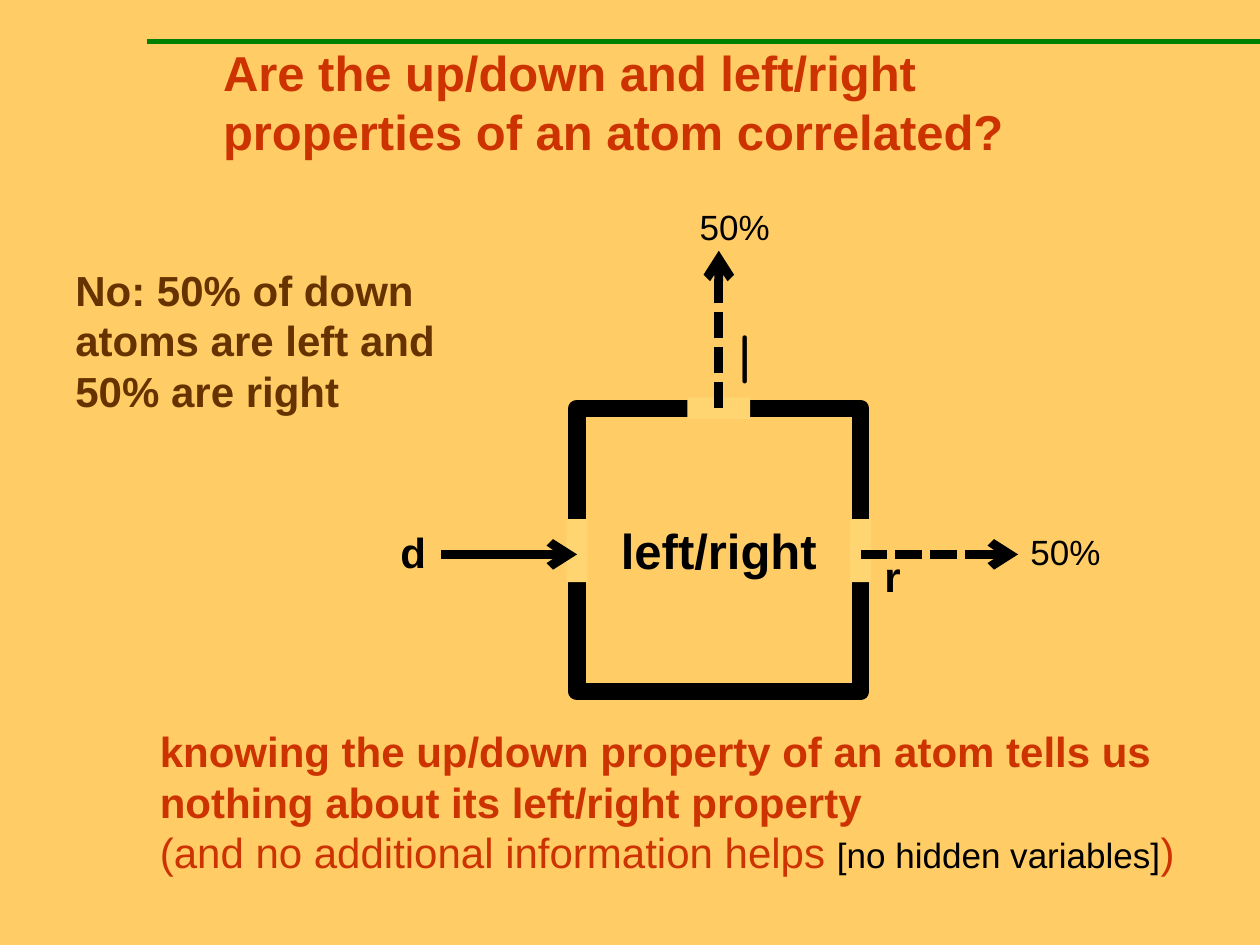
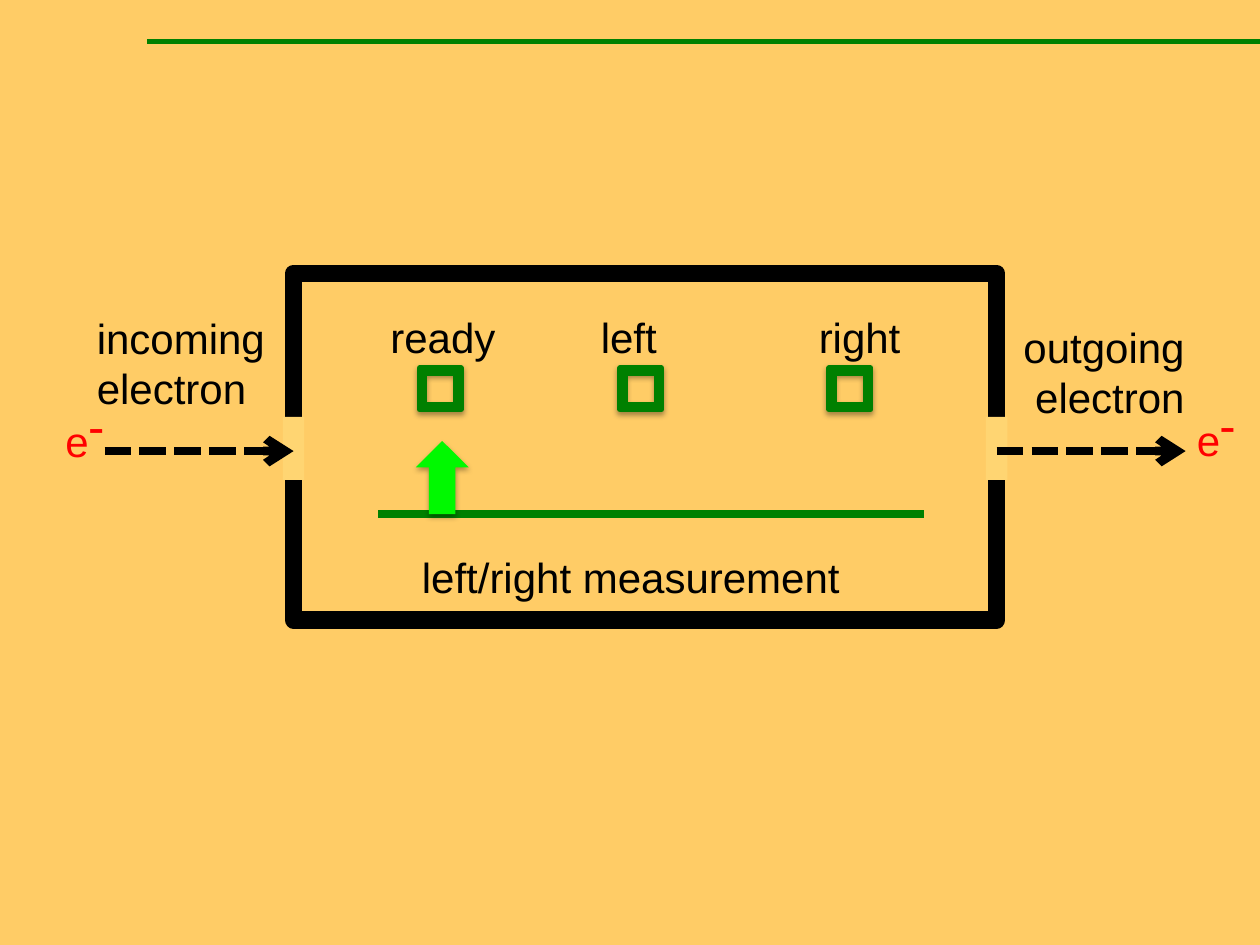
from lxml.etree import SubElement
from pptx import Presentation
from pptx.dml.color import RGBColor
from pptx.enum.shapes import MSO_CONNECTOR, MSO_SHAPE
from pptx.enum.text import MSO_ANCHOR, MSO_AUTO_SIZE, PP_ALIGN
from pptx.oxml.ns import qn
from pptx.util import Inches, Pt

# Shared colours and sizes
BACKGROUND = "FFCC66"
OPENING = "FFD572"
BLACK = "000000"
GREEN = "008000"
POINTER_GREEN = "00F900"
RED_BROWN = "CC3300"
BROWN = "663300"
ELECTRON_RED = "FF0000"
FONT = "Arial"
TITLE_LAYOUT, BLANK_LAYOUT = 5, 6
WALL, ARROW_WIDTH = 10, 5
GATE_WIDTH, GATE_LENGTH = 0.17, 0.5


def rgb(hex_colour):
    return RGBColor.from_string(hex_colour)


def place(*lengths):
    return [Inches(length) for length in lengths]


# Text
def add_run(paragraph, text, size, colour=BLACK, bold=False, font=FONT):
    run = paragraph.add_run()
    run.text = text
    run.font.name = font
    run.font.size = Pt(size)
    run.font.bold = bold
    run.font.color.rgb = rgb(colour)


def add_text(shapes, box, text, size=24, colour=BLACK, bold=False,
             font=FONT, align=PP_ALIGN.LEFT):
    frame = shapes.add_textbox(*place(*box)).text_frame
    frame.word_wrap = True
    frame.auto_size = MSO_AUTO_SIZE.SHAPE_TO_FIT_TEXT
    frame.paragraphs[0].alignment = align
    add_run(frame.paragraphs[0], text, size, colour, bold, font)
    return frame


# Shapes and lines
def add_block(slide, kind, box, fill=None, line=None, width=0, shadow=False):
    block = slide.shapes.add_shape(kind, *place(*box))
    block.shadow.inherit = False
    if fill:
        block.fill.solid()
        block.fill.fore_color.rgb = rgb(fill)
    else:
        block.fill.background()
    if line:
        block.line.color.rgb = rgb(line)
        block.line.width = Pt(width)
    else:
        block.line.fill.background()
    if shadow:
        effects = block.element.spPr.find(qn("a:effectLst"))
        outer = SubElement(effects, qn("a:outerShdw"), blurRad=str(Pt(3.1)),
                           dist=str(Pt(1.8)), dir="5400000", rotWithShape="0")
        shade = SubElement(outer, qn("a:srgbClr"), val=BLACK)
        SubElement(shade, qn("a:alpha"), val="35000")
    return block


def add_line(slide, start, end, colour, width, dashed=False, arrow=False):
    line = slide.shapes.add_connector(MSO_CONNECTOR.STRAIGHT,
                                      *place(*start, *end))
    line.line.color.rgb = rgb(colour)
    line.line.width = Pt(width)
    properties = line.element.spPr
    outline = properties.find(qn("a:ln"))
    if dashed:
        SubElement(outline, qn("a:prstDash"), val="sysDash")
    if arrow:
        SubElement(outline, qn("a:tailEnd"), type="arrow")
    SubElement(properties, qn("a:effectLst"))
    return line


def add_path(slide, start, end, dashed=True):
    return add_line(slide, start, end, BLACK, ARROW_WIDTH, dashed, arrow=True)


# Parts both slides use
def new_slide(deck, layout):
    slide = deck.slides.add_slide(deck.slide_layouts[layout])
    add_line(slide, (1.17, 0.33), (10, 0.33), GREEN, 3)
    return slide


def add_chamber(slide, box, gate_drop, top_gate=False):
    """Thick-walled box with openings centred on its walls."""
    left, top, width, height = box
    chamber = add_block(slide, MSO_SHAPE.RECTANGLE, box,
                        line=BLACK, width=WALL)
    half = GATE_WIDTH / 2
    gates = [(x - half, top + gate_drop, GATE_WIDTH, GATE_LENGTH)
             for x in (left, left + width)]
    if top_gate:
        gates.append((left + (width - GATE_LENGTH) / 2, top - half,
                      GATE_LENGTH, GATE_WIDTH))
    for gate in gates:
        add_block(slide, MSO_SHAPE.RECTANGLE, gate, fill=OPENING)
    return chamber


# Slide 1
def add_title(slide, box, text):
    title = slide.shapes.title
    title.left, title.top, title.width, title.height = place(*box)
    frame = title.text_frame
    frame.word_wrap = True
    frame.auto_size = MSO_AUTO_SIZE.NONE
    frame.vertical_anchor = MSO_ANCHOR.TOP
    frame.paragraphs[0].alignment = PP_ALIGN.LEFT
    add_run(frame.paragraphs[0], text, 28, RED_BROWN, bold=True)


def add_correlation_test(slide, box):
    left, top, width, height = box
    right, middle = left + width, left + width / 2
    beam = top + 1.16
    chamber = add_chamber(slide, box, 0.88, top_gate=True)

    add_path(slide, (left - 1.08, beam), (left, beam), dashed=False)
    add_path(slide, (right, beam), (right + 1.25, beam))
    upward = add_path(slide, (middle, top), (middle, top - 1.25))
    upward.begin_connect(chamber, 0)

    add_text(slide.shapes, (left + 0.25, beam - 0.32, 2.33, 0.57),
             "left/right", 28, bold=True)
    add_text(slide.shapes, (right + 0.09, beam - 0.08, 0.67, 0.51),
             "r", bold=True)
    add_text(slide.shapes, (left - 1.5, beam - 0.27, 0.67, 0.51),
             "d", bold=True)
    add_text(slide.shapes, (middle + 0.05, top - 0.8, 0.67, 0.77),
             "l", 40, font="Comic Neue")
    for share_left, share_top in ((middle - 0.25, top - 1.66),
                                  (right + 1.25, beam - 0.24)):
        add_text(slide.shapes, (share_left, share_top, 0.9, 0.44), "50%", 20)


def add_conclusion(slide, box):
    frame = add_text(slide.shapes, box,
                     "knowing the up/down property of an atom tells us "
                     "nothing about its left/right property",
                     colour=RED_BROWN, bold=True)
    remark = frame.add_paragraph()
    add_run(remark, "(and no additional information helps ", 24, RED_BROWN)
    add_run(remark, "[no hidden variables]", 20)
    add_run(remark, ")", 24, RED_BROWN)


def build_correlation_slide(deck):
    slide = new_slide(deck, TITLE_LAYOUT)
    add_title(slide, (1.67, 0.29, 7.33, 1.04),
              "Are the up/down and left/right properties of an atom "
              "correlated?")
    add_correlation_test(slide, (4.58, 3.24, 2.25, 2.25))
    add_text(slide.shapes, (0.5, 2.05, 3.75, 1.31),
             "No: 50% of down atoms are left and 50% are right",
             colour=BROWN, bold=True)
    add_conclusion(slide, (1.17, 5.71, 8.42, 1.31))


# Slide 2
def add_electron(slide, left, top):
    electron = slide.shapes.add_group_shape()
    add_text(electron.shapes, (left, top, 0.42, 0.5), "e",
             colour=ELECTRON_RED)
    add_text(electron.shapes, (left + 0.18, top - 0.16, 0.42, 0.57), "-", 28,
             ELECTRON_RED)


def add_dial(slide, box):
    """Three indicator frames above a pointer on its track."""
    left, top, width, height = box
    indicators = (("ready", 0.33, 0), ("left", 1.92, 1.67),
                  ("right", 3.58, 3.4))
    for label, frame_offset, label_offset in indicators:
        add_block(slide, MSO_SHAPE.FRAME,
                  (left + frame_offset, top + 0.5, 0.33, 0.33),
                  GREEN, GREEN, 3, shadow=True)
        add_text(slide.shapes, (left + label_offset, top, 1.33, 0.51), label)
    track = top + height
    add_line(slide, (left, track), (left + width, track), GREEN, 5)
    add_block(slide, MSO_SHAPE.UP_ARROW, (left + 0.3, track - 0.58, 0.42, 0.58),
              POINTER_GREEN, shadow=True)


def add_measuring_device(slide, box):
    left, top, width, height = box
    right, beam = left + width, top + 1.41
    add_chamber(slide, box, 1.14)
    for wall, start in ((left, left - 1.5), (right, right)):
        add_path(slide, (start, beam), (start + 1.5, beam))
    add_electron(slide, left - 1.91, beam - 0.33)
    add_electron(slide, right + 1.49, beam - 0.34)
    add_text(slide.shapes, (left - 1.66, top + 0.26, 2.17, 0.91),
             "incoming electron")
    add_text(slide.shapes, (right - 0.58, top + 0.33, 2.17, 0.91),
             "outgoing electron", align=PP_ALIGN.RIGHT)
    add_text(slide.shapes, (left + 0.92, top + 2.16, 4.75, 0.51),
             "left/right measurement")
    add_dial(slide, (left + 0.67, top + 0.25, 4.33, 1.66))


def build_measurement_slide(deck):
    slide = new_slide(deck, BLANK_LAYOUT)
    add_measuring_device(slide, (2.33, 2.17, 5.58, 2.75))


def main():
    deck = Presentation()
    deck.slide_width, deck.slide_height = place(10, 7.5)
    backdrop = deck.slide_master.background.fill
    backdrop.solid()
    backdrop.fore_color.rgb = rgb(BACKGROUND)
    build_correlation_slide(deck)
    build_measurement_slide(deck)
    deck.save("out.pptx")


if __name__ == "__main__":
    main()
